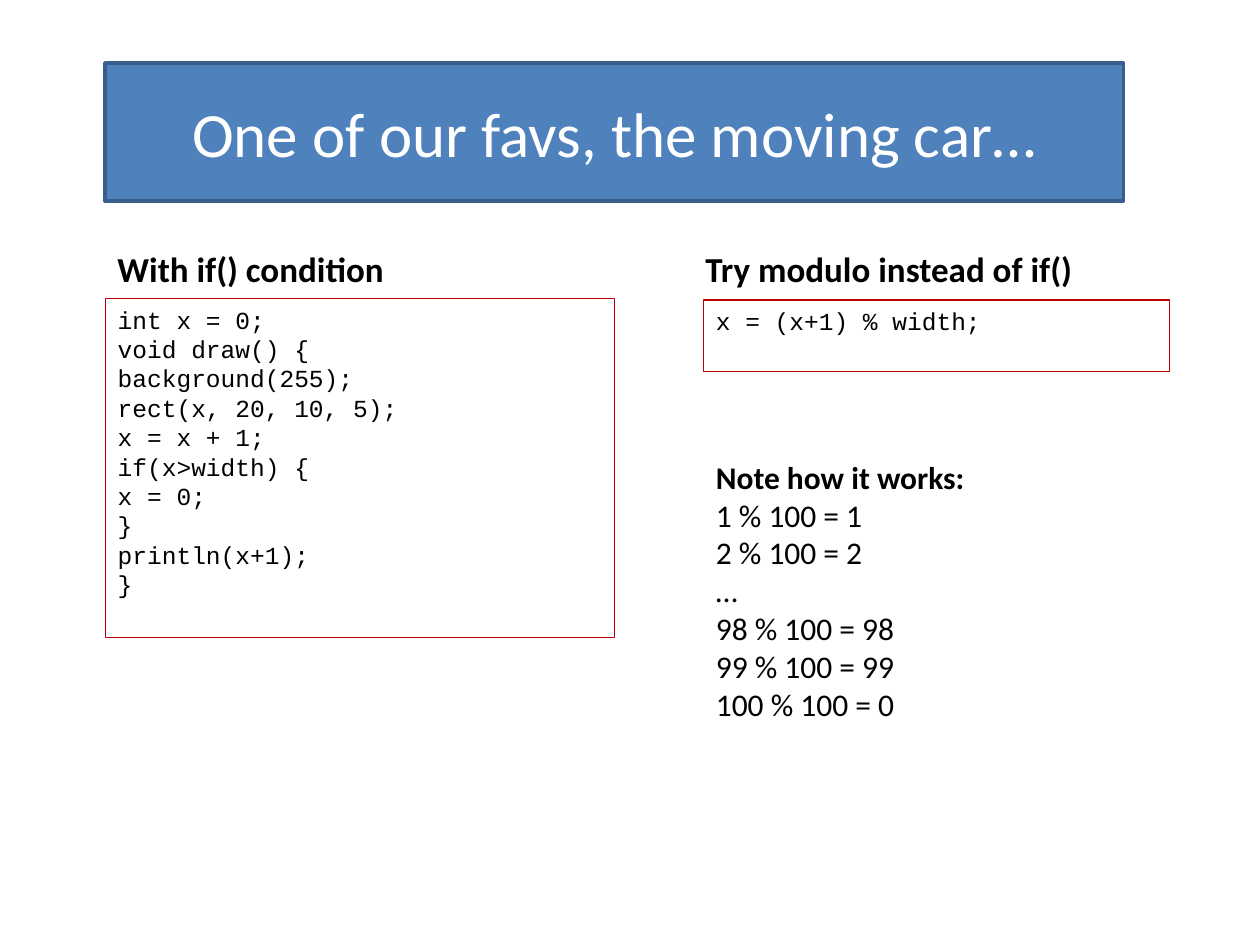
from pptx import Presentation
from pptx import util as u
from pptx.dml.color import RGBColor
from pptx.enum import shapes, text

BLACK = RGBColor(0x00, 0x00, 0x00)
WHITE = RGBColor(0xFF, 0xFF, 0xFF)
BLUE = RGBColor(0x4F, 0x81, 0xBD)
DARK_BLUE = RGBColor(0x3A, 0x5F, 0x8C)
RED = RGBColor(0xC0, 0x00, 0x00)


class Deck:
    """Holds the style and the current slide; lengths are in points."""

    body_font = "Calibri"
    code_font = "Courier New"

    def __init__(self, width, height):
        self.prs = Presentation()
        self.prs.slide_width = u.Pt(width)
        self.prs.slide_height = u.Pt(height)
        self.s = self.prs.slides.add_slide(self.prs.slide_layouts[5])

    def set_text(self, sp, lines, font, size, color=BLACK, bold_lines=0,
                 align=text.PP_ALIGN.LEFT, anchor=text.MSO_ANCHOR.TOP):
        tf = sp.text_frame
        tf.text = "\n".join(lines)
        tf.word_wrap = True
        tf.auto_size = text.MSO_AUTO_SIZE.NONE
        tf.vertical_anchor = anchor
        for i, p in enumerate(tf.paragraphs):
            p.alignment = align
            p.font.name = font
            p.font.size = u.Pt(size)
            p.font.color.rgb = color
            p.font.bold = i < bold_lines

    def title(self, box, line):
        sp = self.s.shapes.title
        sp.left, sp.top, sp.width, sp.height = map(u.Pt, box)
        sp.fill.solid()
        sp.fill.fore_color.rgb = BLUE
        sp.line.color.rgb = DARK_BLUE
        sp.line.width = u.Pt(2)
        self.set_text(sp, [line], self.body_font, 36, WHITE,
                      align=text.PP_ALIGN.CENTER,
                      anchor=text.MSO_ANCHOR.MIDDLE)

    def text_box(self, box, lines, size):
        """Text whose first line is bold."""
        sp = self.s.shapes.add_textbox(*map(u.Pt, box))
        self.set_text(sp, lines, self.body_font, size, bold_lines=1)

    def code_box(self, box, lines):
        sp = self.s.shapes.add_shape(shapes.MSO_SHAPE.RECTANGLE,
                                     *map(u.Pt, box))
        sp.shadow.inherit = False
        sp.fill.background()
        sp.line.color.rgb = RED
        sp.line.width = u.Pt(0.75)
        self.set_text(sp, lines, self.code_font, 14)


def main():
    deck = Deck(720, 540)
    deck.title((60, 36, 582, 79), "One of our favs, the moving car…")

    # Column headings
    for left, heading in ((60, "With if() condition"),
                          (396, "Try modulo instead of if()")):
        deck.text_box((left, 138, 264, 32), [heading], 20)

    # Code listings
    deck.code_box((60.2, 170.5, 291, 194), [
        "int x = 0;",
        "void draw() {",
        "background(255);",
        "rect(x, 20, 10, 5);",
        "x = x + 1;",
        "if(x>width) {",
        "x = 0;",
        "}",
        "println(x+1);",
        "}",
    ])
    deck.code_box((402, 171.5, 266.5, 41), ["x = (x+1) % width;"])

    # Worked modulo values
    deck.text_box((402, 258, 266.5, 181), [
        "Note how it works:",
        "1 % 100 = 1",
        "2 % 100 = 2",
        "…",
        "98 % 100 = 98",
        "99 % 100 = 99",
        "100 % 100 = 0",
    ], 18)

    deck.prs.save("out.pptx")


if __name__ == "__main__":
    main()
